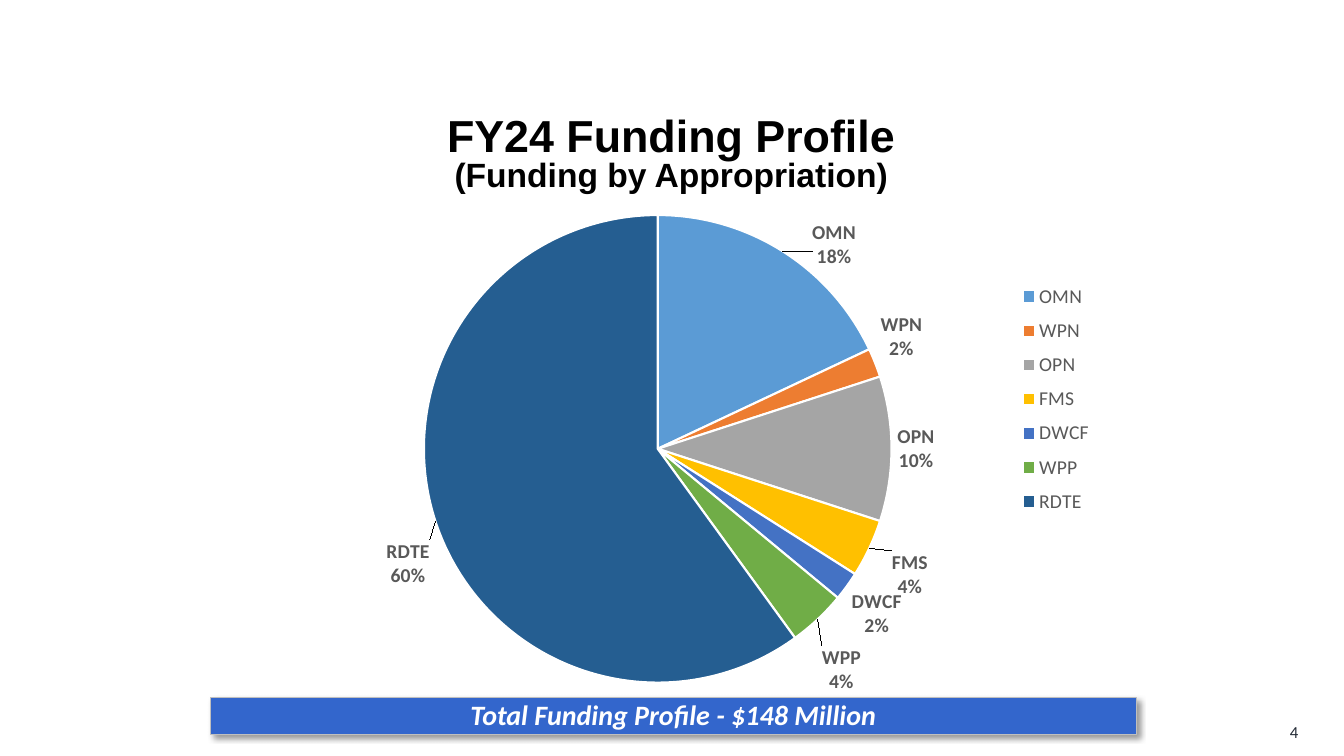
from lxml import etree
from pptx import Presentation
from pptx.chart.data import CategoryChartData
from pptx.dml.color import RGBColor
from pptx.enum.chart import XL_CHART_TYPE as ChartType
from pptx.enum.chart import XL_LABEL_POSITION as LabelPos
from pptx.enum.chart import XL_LEGEND_POSITION as LegendPos
from pptx.enum.shapes import MSO_SHAPE as Shape
from pptx.enum.text import MSO_ANCHOR as Anchor
from pptx.enum.text import PP_ALIGN as Align
from pptx.oxml import parse_xml
from pptx.oxml.ns import nsdecls, qn
from pptx.util import Pt

BLACK = RGBColor(0x00, 0x00, 0x00)
WHITE = RGBColor(0xFF, 0xFF, 0xFF)
NAVY = RGBColor(0x22, 0x2A, 0x35)
BLUE = RGBColor(0x33, 0x66, 0xCC)
SILVER = RGBColor(0xBF, 0xBF, 0xBF)
GREY = RGBColor(0x59, 0x59, 0x59)

FUNDING = [
    ("OMN", 18, RGBColor(0x5B, 0x9B, 0xD5)),
    ("WPN", 2, RGBColor(0xED, 0x7D, 0x31)),
    ("OPN", 10, RGBColor(0xA5, 0xA5, 0xA5)),
    ("FMS", 4, RGBColor(0xFF, 0xC0, 0x00)),
    ("DWCF", 2, RGBColor(0x44, 0x72, 0xC4)),
    ("WPP", 4, RGBColor(0x70, 0xAD, 0x47)),
    ("RDTE", 60, RGBColor(0x25, 0x5E, 0x91)),
]
LABEL_SHIFTS = {0: (0.03, 0.04), 3: (0.02, 0), 5: (0, 0.04), 6: (0, 0.03)}


def set_font(font, size, color, name="Calibri", bold=False, italic=False):
    font.size, font.name = Pt(size), name
    font.bold, font.italic = bold, italic
    font.color.rgb = color


def layout_xml(**values):
    body = "".join(f'<c:{key} val="{value}"/>' for key, value in values.items())
    return parse_xml(f'<c:layout {nsdecls("c")}><c:manualLayout>{body}'
                     '</c:manualLayout></c:layout>')


class FundingSlide:
    """Holds the style and the slide, and adds each kind of element."""

    def __init__(self, prs):
        self.s = prs.slides.add_slide(prs.slide_layouts[6])

    def fill_text(self, sp, lines, color, align=Align.CENTER, spacing=1.0, **style):
        tf = sp.text_frame
        tf.word_wrap = True
        tf.vertical_anchor = Anchor.MIDDLE
        p = tf.paragraphs[0]
        p.alignment, p.line_spacing = align, spacing
        for i, (text, size) in enumerate(lines):
            if i:
                p.add_line_break()
            r = p.add_run()
            r.text = text
            set_font(r.font, size, color, **style)

    def text(self, box, lines, color, **style):
        sp = self.s.shapes.add_textbox(*map(Pt, box))
        self.fill_text(sp, lines, color, **style)

    def banner(self, box, lines, color, **style):
        sp = self.s.shapes.add_shape(Shape.RECTANGLE, *map(Pt, box))
        sp.fill.solid()
        sp.fill.fore_color.rgb = BLUE
        sp.line.color.rgb = SILVER
        sp.line.width = Pt(0.75)
        sp.shadow.inherit = False
        effects = sp.element.spPr.find(qn("a:effectLst"))
        shadow = etree.SubElement(effects, qn("a:outerShdw"), blurRad=str(Pt(4)),
                                  dist=str(Pt(3)), dir="2700000", algn="tl")
        black = etree.SubElement(shadow, qn("a:srgbClr"), val="000000")
        etree.SubElement(black, qn("a:alpha"), val="40000")
        self.fill_text(sp, lines, color, **style)

    def pie(self, box, rows, shifts):
        data = CategoryChartData(number_format="General")
        data.categories = [name for name, _, _ in rows]
        data.add_series("Series 1", [value for _, value, _ in rows])
        chart = self.s.shapes.add_chart(ChartType.PIE, *map(Pt, box), data).chart
        set_font(chart.font, 10, BLACK)
        chart.has_title = False
        chart.has_legend = True
        chart.legend.position = LegendPos.RIGHT
        chart.legend.include_in_layout = False
        set_font(chart.legend.font, 14, GREY)
        plot = chart.plots[0]
        plot.vary_by_categories = True
        series = plot.series[0]
        for i, (_, _, color) in enumerate(rows):
            fmt = series.points[i].format
            fmt.fill.solid()
            fmt.fill.fore_color.rgb = color
            fmt.line.color.rgb = WHITE
            fmt.line.width = Pt(1.5)
        labels = series.data_labels
        labels.show_percentage = labels.show_category_name = True
        labels.show_value = False
        labels.number_format = "0%"
        labels.number_format_is_linked = False
        labels.position = LabelPos.OUTSIDE_END
        set_font(labels.font, 14, GREY, bold=True)
        for i in shifts:
            label = series.points[i].data_label
            label.position = LabelPos.OUTSIDE_END
            set_font(label.font, 14, GREY, bold=True)
        self.place_parts(chart.element, shifts)

    def place_parts(self, root, shifts):
        for old in root.xpath(".//c:plotArea/c:layout | .//c:legend/c:layout"):
            old.getparent().remove(old)
        root.xpath(".//c:plotArea")[0].insert(0, layout_xml(
            layoutTarget="inner", xMode="edge", yMode="edge",
            x=0.18, y=0.09, w=0.54, h=0.85))
        root.xpath(".//c:legendPos")[0].addnext(layout_xml(
            xMode="edge", yMode="edge", x=0.85, y=0.2, w=0.12, h=0.45))
        for label in root.xpath(".//c:dLbl"):
            idx = label.find(qn("c:idx"))
            x, y = shifts[int(idx.get("val"))]
            idx.addnext(layout_xml(x=x, y=y))
            for tag, shown in (("Val", 0), ("CatName", 1), ("Percent", 1)):
                label.find(qn(f"c:show{tag}")).set("val", str(shown))


def main():
    prs = Presentation()
    prs.slide_width, prs.slide_height = Pt(960), Pt(540)
    slide = FundingSlide(prs)
    slide.text((718.6, 508.3, 216, 28.8), [("4", 12)], NAVY, align=Align.RIGHT)
    slide.text((149, 15.8, 661, 191.5),
               [("FY24 Funding Profile", 32), ("(Funding by Appropriation)", 24)],
               BLACK, name="Arial", bold=True, spacing=0.8)
    slide.banner((150.5, 498.2, 661, 26.6),
                 [("Total Funding Profile - $148 Million", 20)],
                 WHITE, bold=True, italic=True, spacing=0.9)
    slide.pie((191.5, 117.4, 618.5, 394.6), FUNDING, LABEL_SHIFTS)
    prs.save("out.pptx")


if __name__ == "__main__":
    main()
